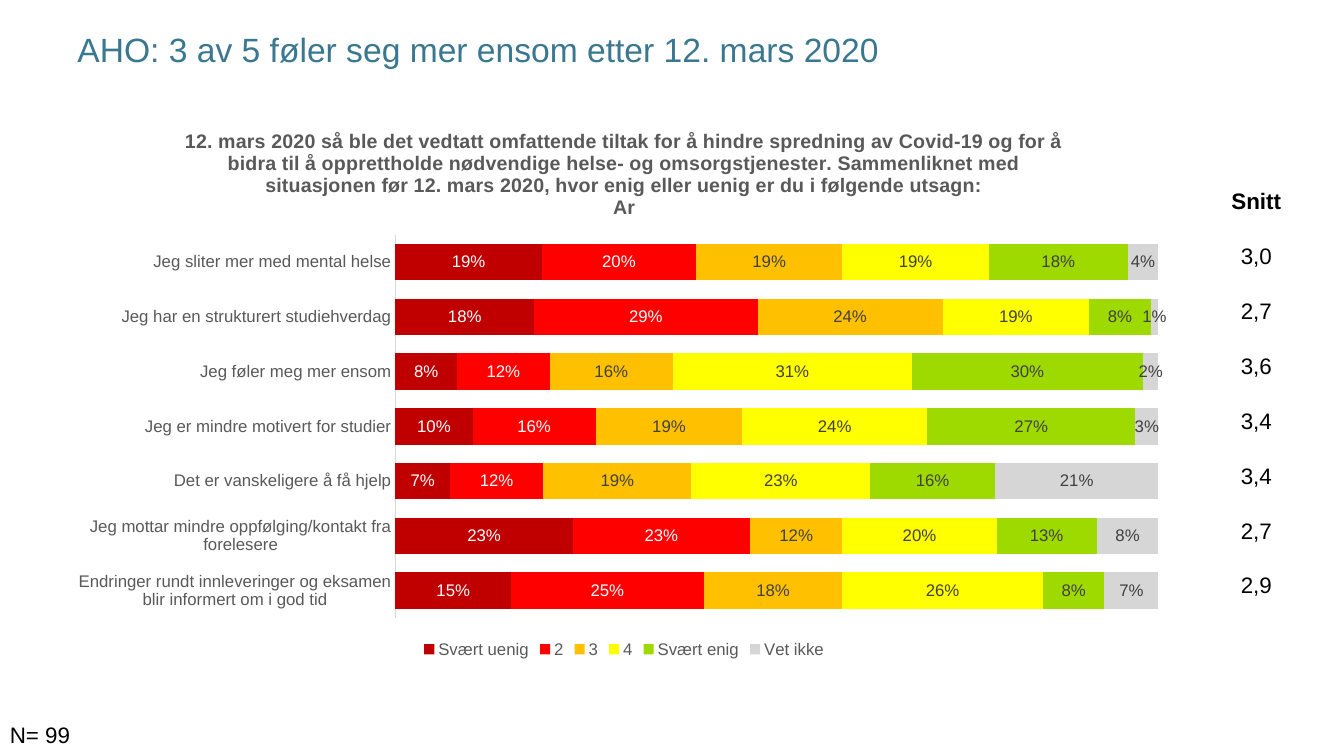
import pptx
import pptx.util
import pptx.chart.data
import pptx.dml.color
import pptx.enum.chart
import pptx.enum.text

Inches = pptx.util.Inches
Pt = pptx.util.Pt
RGBColor = pptx.dml.color.RGBColor
Align = pptx.enum.text.PP_ALIGN
Anchor = pptx.enum.text.MSO_ANCHOR

BLACK = RGBColor(0, 0, 0)
WHITE = RGBColor(255, 255, 255)
TEAL = RGBColor(0x3A, 0x77, 0x90)
GREY = RGBColor(0x59, 0x59, 0x59)
DARK = RGBColor(0x40, 0x40, 0x40)
PALE = RGBColor(0xD9, 0xD9, 0xD9)
MAROON = RGBColor(0xC0, 0, 0)
RED = RGBColor(255, 0, 0)
AMBER = RGBColor(255, 0xC0, 0)
YELLOW = RGBColor(255, 255, 0)
GREEN = RGBColor(0x9E, 0xD9, 0)
SILVER = RGBColor(0xD6, 0xD6, 0xD6)

HEADING = [
    "12. mars 2020 så ble det vedtatt omfattende tiltak for å hindre spredning av Covid-19 "
    "og for å bidra til å opprettholde nødvendige helse- og omsorgstjenester. Sammenliknet "
    "med situasjonen før 12. mars 2020, hvor enig eller uenig er du i følgende utsagn:",
    "Ar",
]
CLAIMS = [
    "Jeg sliter mer med mental helse",
    "Jeg har en strukturert studiehverdag",
    "Jeg føler meg mer ensom",
    "Jeg er mindre motivert for studier",
    "Det er vanskeligere å få hjelp",
    "Jeg mottar mindre oppfølging/kontakt fra forelesere",
    "Endringer rundt innleveringer og eksamen blir informert om i god tid",
]
ANSWERS = [
    ("Svært uenig", MAROON, WHITE, [0.19, 0.18, 0.08, 0.1, 0.07, 0.23, 0.15]),
    ("2", RED, WHITE, [0.2, 0.29, 0.12, 0.16, 0.12, 0.23, 0.25]),
    ("3", AMBER, DARK, [0.19, 0.24, 0.16, 0.19, 0.19, 0.12, 0.18]),
    ("4", YELLOW, DARK, [0.19, 0.19, 0.31, 0.24, 0.23, 0.2, 0.26]),
    ("Svært enig", GREEN, DARK, [0.18, 0.08, 0.3, 0.27, 0.16, 0.13, 0.08]),
    ("Vet ikke", SILVER, DARK, [0.04, 0.01, 0.02, 0.03, 0.21, 0.08, 0.07]),
]
MEANS = ["3,0", "2,7", "3,6", "3,4", "3,4", "2,7", "2,9"]


def style(font, size, color, bold=False):
    """Set the face, size, colour and weight of a font."""
    font.name = "Arial"
    font.size = Pt(size)
    font.color.rgb = color
    font.bold = bold


def write(frame, lines, size, color, align=None, gap=0):
    """Fill a text frame with one paragraph per line."""
    for i, line in enumerate(lines):
        para = frame.add_paragraph() if i else frame.paragraphs[0]
        para.text = line
        para.alignment = align
        if i and gap:
            para.space_before = Pt(gap)
        style(para.font, size, color)


def add_text(slide, box, lines, size, color=BLACK, align=None, gap=0):
    """Add a text box and return its frame."""
    frame = slide.shapes.add_textbox(*map(Inches, box)).text_frame
    frame.word_wrap = True
    write(frame, lines, size, color, align, gap)
    return frame


def style_axes(chart):
    """Show the claims from the top down and hide the value axis."""
    claims = chart.category_axis
    claims.reverse_order = True
    claims.major_tick_mark = pptx.enum.chart.XL_TICK_MARK.NONE
    claims.format.line.color.rgb = PALE
    claims.format.line.width = Pt(0.75)
    style(claims.tick_labels.font, 12, GREY)
    shares = chart.value_axis
    shares.maximum_scale = 1
    shares.minimum_scale = 0
    shares.has_major_gridlines = False
    shares.visible = False


def style_bars(plot):
    """Colour each answer and label its bars."""
    plot.gap_width = 50
    plot.overlap = 100
    plot.vary_by_categories = False
    for bars, (_, fill, ink, _) in zip(plot.series, ANSWERS):
        bars.format.fill.solid()
        bars.format.fill.fore_color.rgb = fill
        labels = bars.data_labels
        labels.show_value = True
        labels.number_format = "0%"
        labels.number_format_is_linked = False
        style(labels.font, 12, ink)


def add_bars(slide, box):
    """Add the stacked bar chart with its title and legend."""
    data = pptx.chart.data.CategoryChartData(number_format="0%")
    data.categories = CLAIMS
    for name, _, _, shares in ANSWERS:
        data.add_series(name, shares)
    kind = pptx.enum.chart.XL_CHART_TYPE.BAR_STACKED_100
    chart = slide.shapes.add_chart(kind, *map(Inches, box), data).chart
    style(chart.font, 10, BLACK)
    title = chart.chart_title
    write(title.text_frame, HEADING, 14, GREY)
    for para in title.text_frame.paragraphs:
        para.font.bold = True
    title.include_in_layout = False
    chart.has_legend = True
    chart.legend.position = pptx.enum.chart.XL_LEGEND_POSITION.BOTTOM
    chart.legend.include_in_layout = False
    style(chart.legend.font, 12, GREY)
    style_axes(chart)
    style_bars(chart.plots[0])


def main():
    """Build the slide and save it."""
    deck = pptx.Presentation()
    deck.slide_width = Inches(13.33)
    deck.slide_height = Inches(7.5)
    slide = deck.slides.add_slide(deck.slide_layouts[6])
    head = add_text(slide, (0.67, 0.01, 12, 0.95),
                    ["AHO: 3 av 5 føler seg mer ensom etter 12. mars 2020"], 24, TEAL)
    head.vertical_anchor = Anchor.MIDDLE
    add_bars(slide, (0.67, 1.08, 11.04, 5.49))
    add_text(slide, (0, 7.11, 1.07, 0.37), ["N= 99"], 16)
    means = add_text(slide, (12.09, 1.81, 0.74, 4.41), ["Snitt"] + MEANS, 16,
                     align=Align.CENTER, gap=20)
    means.paragraphs[0].font.bold = True
    deck.save("out.pptx")


if __name__ == "__main__":
    main()
